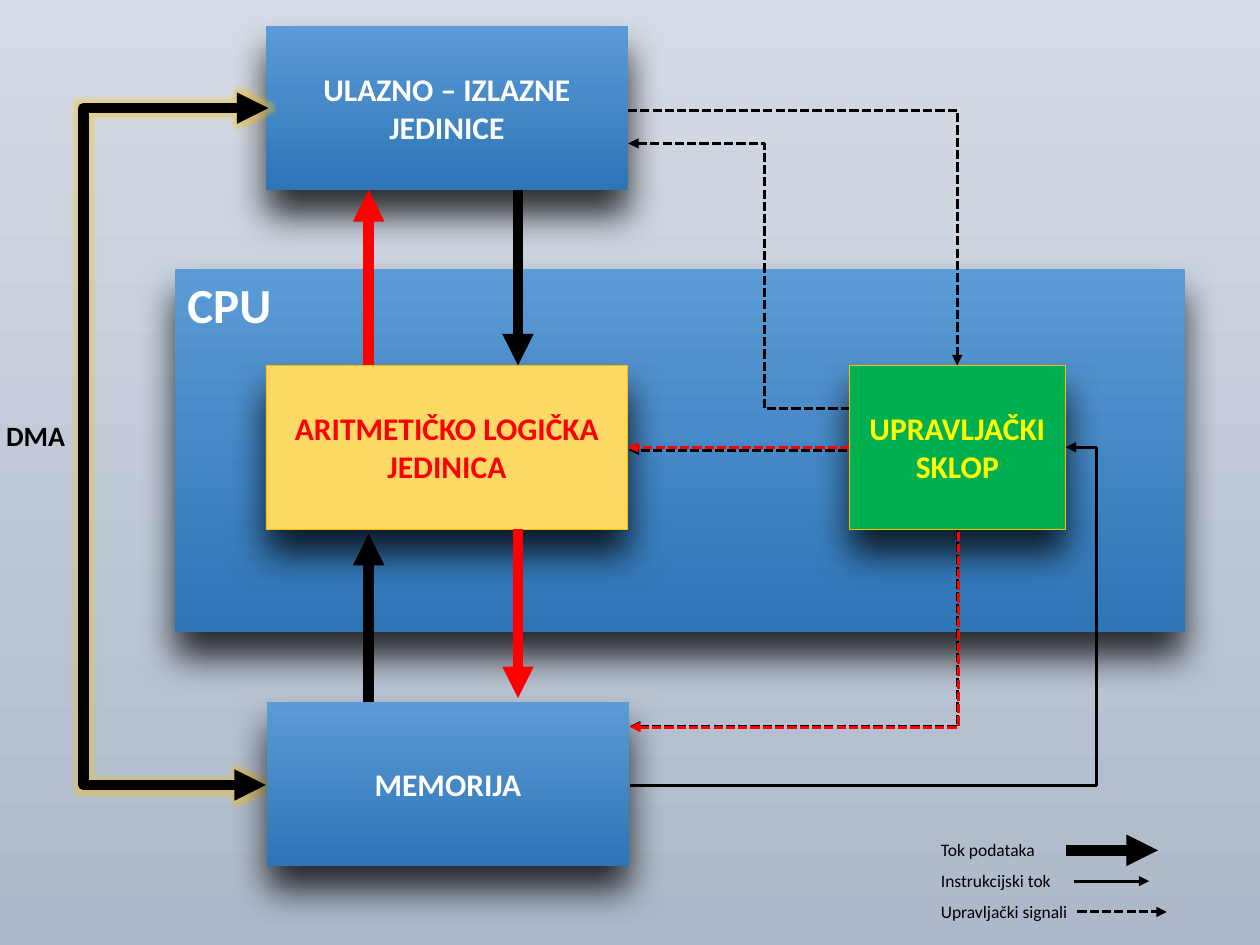
from lxml import etree
from pptx import Presentation
from pptx import util as u
from pptx.dml.color import RGBColor
from pptx.enum import dml, shapes, text
from pptx.oxml.ns import qn

BLUE = ("5B9BD5", "2E75B6")
BLACK, RED, WHITE = "000000", "FF0000", "FFFFFF"
THICK, THIN = 6, 1.75


def rgb(value):
    """Turn a hex string into a colour."""
    return RGBColor.from_string(value)


def fill_down(fill, top, bottom):
    """Fill with a gradient running from top to bottom."""
    fill.gradient()
    fill.gradient_angle = 270
    for stop, value in zip(fill.gradient_stops, (top, bottom)):
        stop.color.rgb = rgb(value)


def add_effect(effects, kind, color, alpha, **settings):
    """Put a glow or shadow into an effect list."""
    effect = etree.SubElement(effects, qn(f"a:{kind}"))
    for name, value in settings.items():
        effect.set(name, str(value))
    shade = etree.SubElement(effect, qn("a:srgbClr"), val=color)
    etree.SubElement(shade, qn("a:alpha"), val=str(alpha * 1000))


def write(frame, words, size, color, bold=True, align=text.PP_ALIGN.LEFT):
    """Write one run into the first paragraph of a frame."""
    para = frame.paragraphs[0]
    para.alignment = align
    span = para.add_run()
    span.text = words
    span.font.name = "Calibri"
    span.font.size = u.Pt(size)
    span.font.bold = bold
    span.font.color.rgb = rgb(color)


def add_block(page, place, words, fill, color=WHITE, size=18, border=None, centred=True):
    """Add a shadowed rectangle with a label."""
    box = page.shapes.add_shape(shapes.MSO_SHAPE.RECTANGLE, *map(u.Pt, place))
    if isinstance(fill, tuple):
        fill_down(box.fill, *fill)
    else:
        box.fill.solid()
        box.fill.fore_color.rgb = rgb(fill)
    if border:
        box.line.color.rgb = rgb(border)
        box.line.width = u.Pt(0.5)
    else:
        box.line.fill.background()
    box.shadow.inherit = False
    effects = box._element.spPr.find(qn("a:effectLst"))
    add_effect(effects, "outerShdw", BLACK, 78, blurRad=u.Pt(21), dist=u.Pt(14),
               dir=5400000, rotWithShape=0)
    frame = box.text_frame
    frame.word_wrap = True
    frame.vertical_anchor = text.MSO_ANCHOR.MIDDLE if centred else text.MSO_ANCHOR.TOP
    write(frame, words, size, color,
          align=text.PP_ALIGN.CENTER if centred else text.PP_ALIGN.LEFT)
    return box


def add_label(page, place, words, size, bold=False):
    """Add an unwrapped black label."""
    box = page.shapes.add_textbox(*map(u.Pt, place))
    box.text_frame.word_wrap = False
    box.text_frame.auto_size = text.MSO_AUTO_SIZE.SHAPE_TO_FIT_TEXT
    write(box.text_frame, words, size, BLACK, bold)


def add_flow(page, start, end, color=BLACK, width=THIN, dashed=False, ends=("tail",),
             kind=shapes.MSO_CONNECTOR.STRAIGHT, glow=False):
    """Add a connector with arrowheads at the named ends."""
    flow = page.shapes.add_connector(kind, *map(u.Pt, (*start, *end)))
    flow.line.color.rgb = rgb(color)
    flow.line.width = u.Pt(width)
    if dashed:
        flow.line.dash_style = dml.MSO_LINE.SQUARE_DOT
    stroke = flow.line._get_or_add_ln()
    for name in ends:
        etree.SubElement(stroke, qn(f"a:{name}End"), type="triangle")
    effects = etree.SubElement(flow._element.spPr, qn("a:effectLst"))
    if glow:
        add_effect(effects, "glow", "FFC000", 40, rad=u.Pt(5))
    return flow


def add_elbow(page, start, end, bend=None, **style):
    """Add a bent connector turning at x = bend, or with a single corner."""
    flow = add_flow(page, start, end, kind=shapes.MSO_CONNECTOR.ELBOW, **style)
    outline = flow._element.spPr.find(qn("a:prstGeom"))
    if bend is None:
        outline.set("prst", "bentConnector2")
    else:
        share = round((bend - start[0]) / (end[0] - start[0]) * 100000)
        etree.SubElement(outline.find(qn("a:avLst")), qn("a:gd"),
                         name="adj1", fmla=f"val {share}")


def add_legend(page):
    """Explain the three kinds of arrow."""
    rows = [
        ("Tok podataka", 70, 609, 661.7, {"width": THICK}),
        ("Instrukcijski tok", 78.5, 613.5, 656.7, {}),
        ("Upravljački signali", 88, 615.6, 666.7, {"dashed": True}),
    ]
    for row, (words, width, left, right, style) in enumerate(rows):
        top = 475.9 + 17.6 * row
        add_label(page, (530.6, top, width, 19.4), words, 10)
        add_flow(page, (left, top + 10), (right, top + 10), **style)


def main():
    """Build the computer structure slide."""
    deck = Presentation()
    deck.slide_width, deck.slide_height = u.Pt(720), u.Pt(540)
    page = deck.slides.add_slide(deck.slide_layouts[6])
    fill_down(page.background.fill, "D6DCE5", "ADB9CA")

    add_block(page, (100, 153.6, 577.2, 207.6), "CPU", BLUE, size=28, centred=False)
    add_elbow(page, (359, 82), (514, 233.3), bend=436.7, dashed=True, ends=("head",))
    logic = add_block(page, (152, 208.8, 206.8, 93.6), "ARITMETIČKO LOGIČKA JEDINICA",
                      "FFD966", RED, border="FFC000")
    control = add_block(page, (485.3, 208.8, 123.6, 93.6), "UPRAVLJAČKI SKLOP",
                        "00B050", "FFFF00", border="FFC000")
    add_block(page, (152, 15, 206.8, 93.6), "ULAZNO – IZLAZNE JEDINICE", BLUE)

    add_elbow(page, (358.8, 63.1), (547, 208.8), dashed=True)
    left_lane, right_lane = 210.7, 296
    add_flow(page, (right_lane, 108.6), (right_lane, 208.8), width=THICK)
    add_flow(page, (left_lane, 401.5), (left_lane, 305), width=THICK)
    add_flow(page, (484, 257.2), (359.3, 257.2), dashed=True)
    add_elbow(page, (609, 255.6), (360, 448.6), bend=626.8, ends=("head",))
    add_elbow(page, (153.4, 61.8), (152, 448.6), bend=47, width=THICK,
              ends=("head", "tail"), glow=True)
    add_label(page, (-3.6, 235.6, 49, 26.6), "DMA", 16, bold=True)
    add_block(page, (152.6, 401.1, 206.8, 93.6), "MEMORIJA", BLUE)

    signal = add_flow(page, (485.3, 255.6), (358.8, 255.6), RED, dashed=True)
    signal.begin_connect(control, 1)
    signal.end_connect(logic, 3)
    add_legend(page)
    add_flow(page, (right_lane, 302.4), (right_lane, 399), RED, THICK)
    add_flow(page, (left_lane, 208.8), (left_lane, 108.6), RED, THICK)
    for color, shift in ((BLACK, 0), (RED, 0.5)):
        add_elbow(page, (360, 415 + shift), (547 + shift, 303), color=color,
                  dashed=True, ends=("head",))
    deck.save("out.pptx")


if __name__ == "__main__":
    main()
